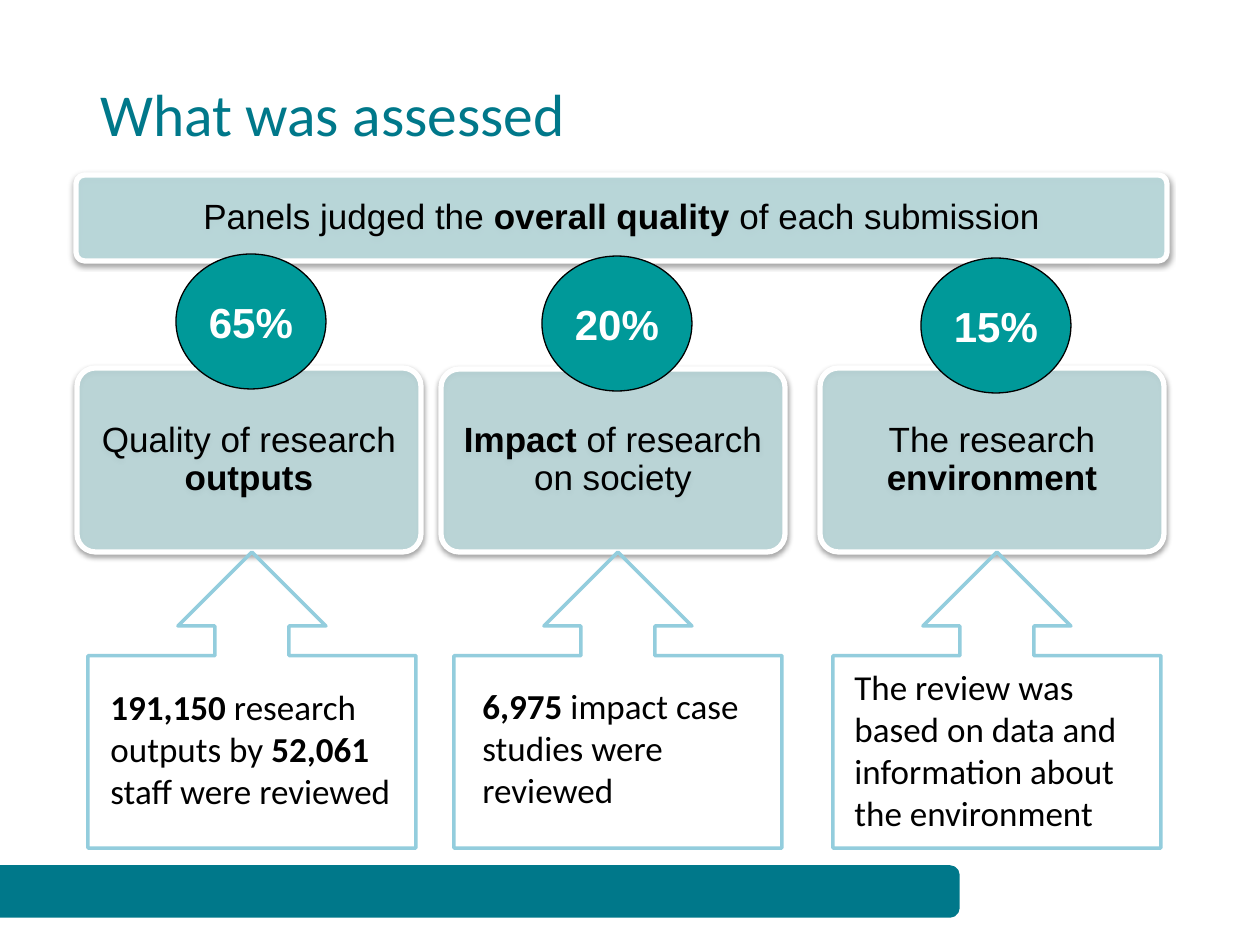
from lxml.etree import SubElement
from pptx import Presentation
from pptx.dml.color import RGBColor
from pptx.enum.shapes import MSO_SHAPE
from pptx.enum.text import MSO_ANCHOR, PP_ALIGN
from pptx.oxml import parse_xml
from pptx.oxml.ns import nsdecls, qn
from pptx.util import Pt

"""Build the "What was assessed" slide: three weighted criteria under one banner."""

SCALE = 914400 / 126
TEAL = "00788A"
SHADOW = (
    f'<a:effectLst {nsdecls("a")}><a:outerShdw blurRad="40000" dist="20000" dir="5400000" rotWithShape="0">'
    '<a:srgbClr val="000000"><a:alpha val="38000"/></a:srgbClr></a:outerShdw></a:effectLst>'
)


def add_box(kind, bounds, fill=None, line=None, weight=0, alpha=None):
    """Add a preset shape, or a text box when kind is None; bounds are px."""
    place = [round(length * SCALE) for length in bounds]
    if kind is None:
        return page.shapes.add_textbox(*place)
    box = page.shapes.add_shape(kind, *place)
    box.shadow.inherit = False
    if fill:
        box.fill.solid()
        box.fill.fore_color.rgb = RGBColor.from_string(fill)
    else:
        box.fill.background()
    box.line.color.rgb = RGBColor.from_string(line)
    box.line.width = Pt(weight)
    if alpha:
        properties = box.fill._xPr
        color = properties.find(qn("a:solidFill")).find(qn("a:srgbClr"))
        SubElement(color, qn("a:alpha")).set("val", str(alpha * 1000))
        properties.replace(properties.find(qn("a:effectLst")), parse_xml(SHADOW))
        box.adjustments[0] = 0.1
    return box


def write(box, runs, font, size, color="000000", align=PP_ALIGN.LEFT, anchor=MSO_ANCHOR.TOP,
          spacing=None, inset=None, wrap=True):
    """Write (text, bold) runs as one paragraph."""
    frame = box.text_frame
    frame.word_wrap = wrap
    frame.vertical_anchor = anchor
    if inset:
        frame.margin_left = frame.margin_right = round(inset * SCALE)
        frame.margin_top = frame.margin_bottom = round(inset * SCALE)
    para = frame.paragraphs[0]
    para.alignment = align
    para.line_spacing = spacing
    for text, bold in runs:
        span = para.add_run()
        span.text = text
        span.font.name = font
        span.font.size = Pt(size)
        span.font.bold = bold
        span.font.color.rgb = RGBColor.from_string(color)


deck = Presentation()
deck.slide_width = round(1260 * SCALE)
deck.slide_height = round(945 * SCALE)
page = deck.slides.add_slide(deck.slide_layouts[6])

title = add_box(None, (88, 59, 1135, 113))
write(title, [("What was assessed", False)], "Calibri", 34, TEAL, anchor=MSO_ANCHOR.MIDDLE, spacing=Pt(38))
add_box(MSO_SHAPE.ROUNDED_RECTANGLE, (-11, 867, 969, 49), TEAL, TEAL, 2)

banner_runs = [("Panels judged the ", False), ("overall quality ", True), ("of each submission", False)]
cards = [
    ((76, 175, 1091, 86), 80, banner_runs),
    ((77, 368, 344, 184), 70, [("Quality of research ", False), ("outputs", True)]),
    ((441, 369, 344, 183), 70, [("Impact", True), (" of research on society", False)]),
    ((820, 368, 344, 184), 70, [("The research ", False), ("environment", True)]),
]
for bounds, alpha, runs in cards:
    card = add_box(MSO_SHAPE.ROUNDED_RECTANGLE, bounds, "BBE0E3", "FFFFFF", 3, alpha)
    write(card, runs, "Arial", 20, align=PP_ALIGN.CENTER, anchor=MSO_ANCHOR.MIDDLE, spacing=0.9, inset=10)

columns = [
    (88, "65%", 254, (98, 679, 307, 140),
     [("191,150", True), (" research outputs by ", False), ("52,061", True), (" staff were reviewed", False)]),
    (454, "20%", 256, (470, 678, 307, 140),
     [("6,975", True), (" impact case studies were reviewed", False)]),
    (833, "15%", 258, (842, 659, 307, 183),
     [("The review was based on data and information about the environment", False)]),
]
for left, weight, top, note_bounds, runs in columns:
    circle = add_box(MSO_SHAPE.OVAL, (left + 88, top, 150, 135), "009999", "000000", 0.75)
    write(circle, [(weight, True)], "Arial", 24, "FFFFFF", PP_ALIGN.CENTER, MSO_ANCHOR.MIDDLE, wrap=False)
    note = add_box(None, note_bounds)
    write(note, runs, "Calibri", 20)
    add_box(MSO_SHAPE.UP_ARROW_CALLOUT, (left, 552, 328, 296), None, "93CDDD", 2)

deck.save("out.pptx")
